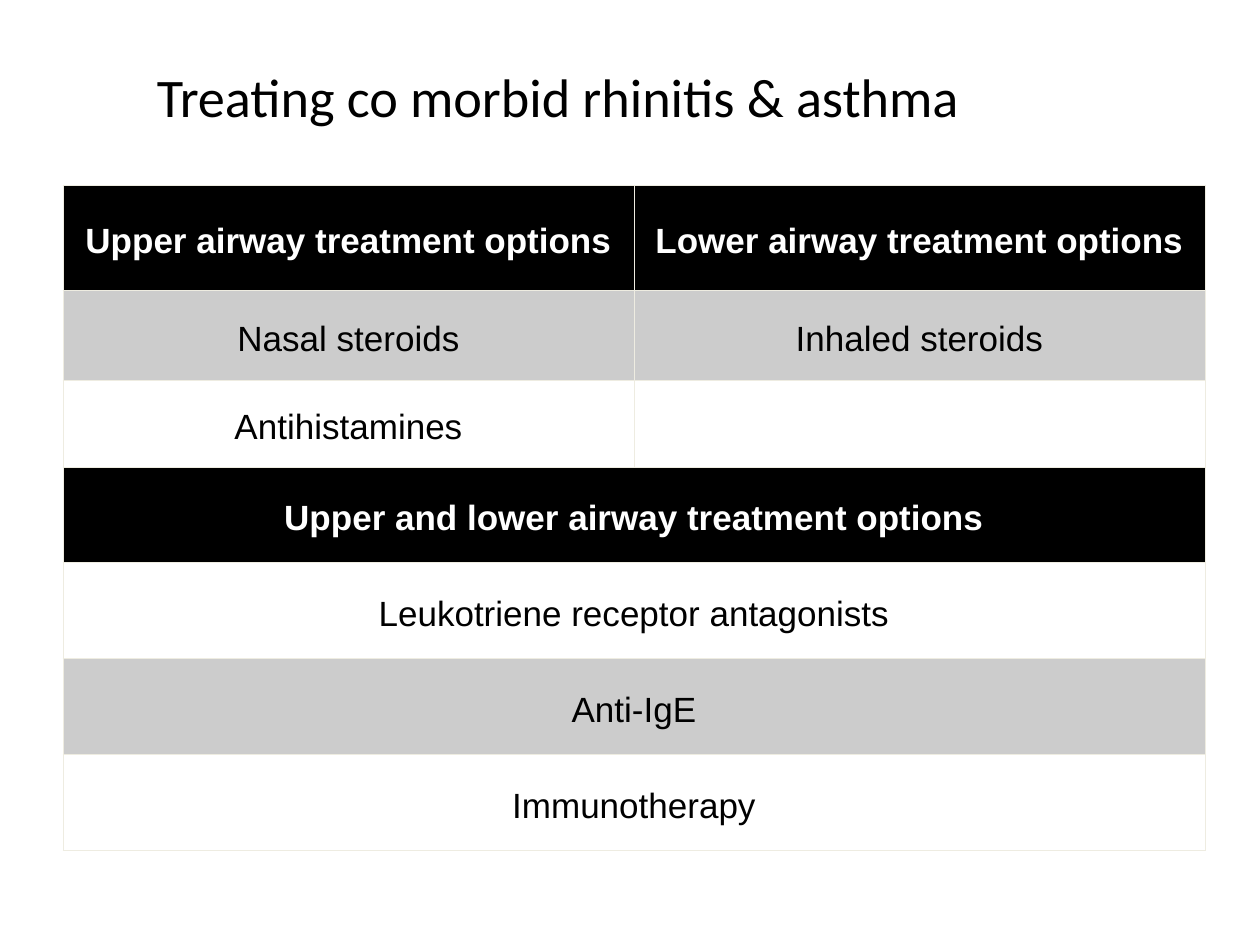
from pptx import Presentation
from pptx.dml.color import RGBColor
from pptx.enum.text import MSO_ANCHOR, PP_ALIGN
from pptx.oxml import parse_xml
from pptx.oxml.ns import nsdecls
from pptx.util import Pt

PX = 914400 // 126
COLORS = {"black": "000000", "white": "FFFFFF", "gray": "CCCCCC", "edge": "EEECE1"}

# Each row: height in px, fill, texts (one text spans both columns)
ROWS = [
    (105, "black", ["Upper airway treatment options", "Lower airway treatment options"]),
    (90, "gray", ["Nasal steroids", "Inhaled steroids"]),
    (87, None, ["Antihistamines", ""]),
    (96, "black", ["Upper and lower airway treatment options"]),
    (96, None, ["Leukotriene receptor antagonists"]),
    (96, "gray", ["Anti-IgE"]),
    (96, None, ["Immunotherapy"]),
]


def px(*nums):
    return [n * PX for n in nums]


def style(para, size, face, color, bold=False):
    para.alignment = PP_ALIGN.CENTER
    for run in para.runs:
        font = run.font
        font.size, font.name, font.bold = Pt(size), face, bold
        font.color.rgb = RGBColor.from_string(COLORS[color])


def add_title(slide, text):
    frame = slide.shapes.add_textbox(*px(54, 45, 1007, 102)).text_frame
    frame.word_wrap = True
    frame.vertical_anchor = MSO_ANCHOR.MIDDLE
    frame.text = text
    style(frame.paragraphs[0], 31, "Calibri", "black")


def set_edges(cell):
    props = cell._tc.get_or_add_tcPr()
    for spot, side in enumerate("LRTB"):
        props.insert(spot, parse_xml(
            f'<a:ln{side} {nsdecls("a")} w="{Pt(0.5)}"><a:solidFill>'
            f'<a:srgbClr val="{COLORS["edge"]}"/></a:solidFill></a:ln{side}>'))


def set_cell(cell, text, fill):
    cell.vertical_anchor = MSO_ANCHOR.MIDDLE
    if text:
        cell.text = text
        para = cell.text_frame.paragraphs[0]
        para.line_spacing = 1.2
        head = fill == "black"
        style(para, 20, "Arial", "white" if head else "black", head)


def add_grid(slide):
    high = sum(row[0] for row in ROWS)
    table = slide.shapes.add_table(len(ROWS), 2, *px(63, 185, 1142, high)).table
    table.first_row = table.horz_banding = False
    for r, (tall, fill, texts) in enumerate(ROWS):
        table.rows[r].height = tall * PX
        # Fill and edges go on every cell, merged ones too
        for c in range(2):
            cell = table.cell(r, c)
            if fill:
                cell.fill.solid()
                cell.fill.fore_color.rgb = RGBColor.from_string(COLORS[fill])
            else:
                cell.fill.background()
            set_edges(cell)
        if len(texts) == 1:
            table.cell(r, 0).merge(table.cell(r, 1))
        for c, text in enumerate(texts):
            set_cell(table.cell(r, c), text, fill)


def main():
    deck = Presentation()
    deck.slide_width, deck.slide_height = px(1260, 945)
    slide = deck.slides.add_slide(deck.slide_layouts[6])
    add_title(slide, "Treating co morbid rhinitis & asthma")
    add_grid(slide)
    deck.save("out.pptx")


if __name__ == "__main__":
    main()
